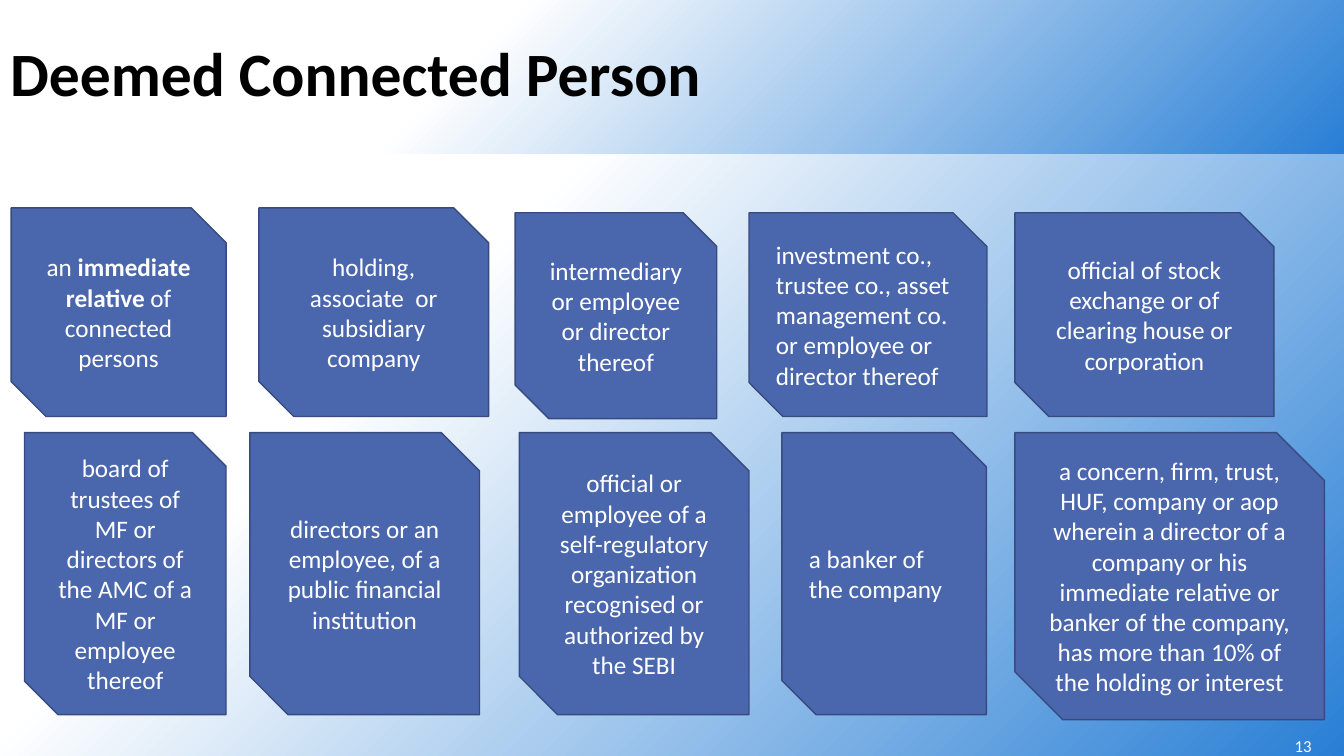
from copy import deepcopy

from pptx import Presentation
from pptx.dml.color import RGBColor
from pptx.enum import shapes, text
from pptx.oxml.ns import qn
from pptx.util import Pt

# Content
HEADING = "Deemed Connected Person"
PAGE_NUMBER = "13"
FONT = "Calibri"
WHITE, BLACK, BLUE, CARD_FILL, CARD_EDGE = "FFFFFF", "000000", "297FD5", "4A66AC", "374B7F"
BACKDROP = [(0, WHITE), (0.35, WHITE), (1, BLUE)]
LEFT, CENTER, RIGHT = text.PP_ALIGN.LEFT, text.PP_ALIGN.CENTER, text.PP_ALIGN.RIGHT

# Each card: left, width, top, height, alignment, runs of (words, bold)
UPPER_CARDS = [
    (8, 153.5, 148.5, 149, CENTER,
     [("an ", False), ("immediate relative ", True), ("of connected persons", False)]),
    (185, 164, 148.5, 149, CENTER, [("holding, associate  or subsidiary company", False)]),
    (368, 144, 152, 147, CENTER, [("intermediary or employee or director thereof", False)]),
    (535, 170, 152, 145.5, LEFT,
     [("investment co., trustee co., asset management co. or employee or director thereof", False)]),
    (725, 185, 152, 145.5, CENTER,
     [("official of stock exchange or of clearing house or corporation", False)]),
]
LOWER_TOP, LOWER_HEIGHT = 309, 201.5
LOWER_CARDS = [
    (17.5, 144, LOWER_TOP, LOWER_HEIGHT, CENTER,
     [("board of trustees of MF or directors of the AMC of a MF or employee thereof", False)]),
    (178.5, 164, LOWER_TOP, LOWER_HEIGHT, CENTER,
     [("directors or an employee, of a public financial institution", False)]),
    (371, 164, LOWER_TOP, LOWER_HEIGHT, CENTER,
     [("official or employee of a self-regulatory organization recognised or "
       "authorized by the SEBI", False)]),
    (558.5, 146, LOWER_TOP, LOWER_HEIGHT, LEFT, [("a banker of the company", False)]),
    (725, 221, LOWER_TOP, 205, CENTER,
     [("a concern, firm, trust, HUF, company or aop wherein a director of a company or "
       "his immediate relative or banker of the company, has more than 10% of the "
       "holding or interest", False)]),
]


def rgb(value):
    return RGBColor.from_string(value)


def paint_backdrop(fill, element):
    """Give a fill the diagonal three-stop gradient; element holds its XML."""
    fill.gradient()
    fill.gradient_angle = 315
    stop_list = element.find(".//" + qn("a:gsLst"))
    stop_list.insert(1, deepcopy(stop_list[0]))
    for stop, (position, color) in zip(fill.gradient_stops, BACKDROP):
        stop.position = position
        stop.color.rgb = rgb(color)


def write(frame, runs, size, color, align):
    frame.word_wrap = True
    frame.vertical_anchor = text.MSO_ANCHOR.MIDDLE
    paragraph = frame.paragraphs[0]
    paragraph.alignment = align
    for words, bold in runs:
        run = paragraph.add_run()
        run.text = words
        run.font.name, run.font.size, run.font.bold = FONT, Pt(size), bold
        run.font.color.rgb = rgb(color)
    return paragraph


deck = Presentation()
deck.slide_width, deck.slide_height = Pt(960), Pt(540)
slide = deck.slides.add_slide(deck.slide_layouts[5])
paint_backdrop(slide.background.fill, slide.element)

# Title band
heading = slide.shapes.title
heading.left, heading.top, heading.width, heading.height = Pt(0), Pt(0), Pt(960), Pt(109.5)
paint_backdrop(heading.fill, heading.element)
write(heading.text_frame, [(HEADING, True)], 44, BLACK, LEFT).line_spacing = 0.9

# Cards
for left, width, top, height, align, runs in UPPER_CARDS + LOWER_CARDS:
    card = slide.shapes.add_shape(shapes.MSO_SHAPE.SNIP_2_DIAG_RECTANGLE,
                                  Pt(left), Pt(top), Pt(width), Pt(height))
    card.shadow.inherit = False
    card.fill.solid()
    card.fill.fore_color.rgb = rgb(CARD_FILL)
    card.line.color.rgb = rgb(CARD_EDGE)
    card.line.width = Pt(1)
    write(card.text_frame, runs, 18, WHITE, align)

# Page number
page = slide.shapes.add_textbox(Pt(705), Pt(518), Pt(239), Pt(30))
write(page.text_frame, [(PAGE_NUMBER, False)], 12, WHITE, RIGHT)

deck.save("out.pptx")
